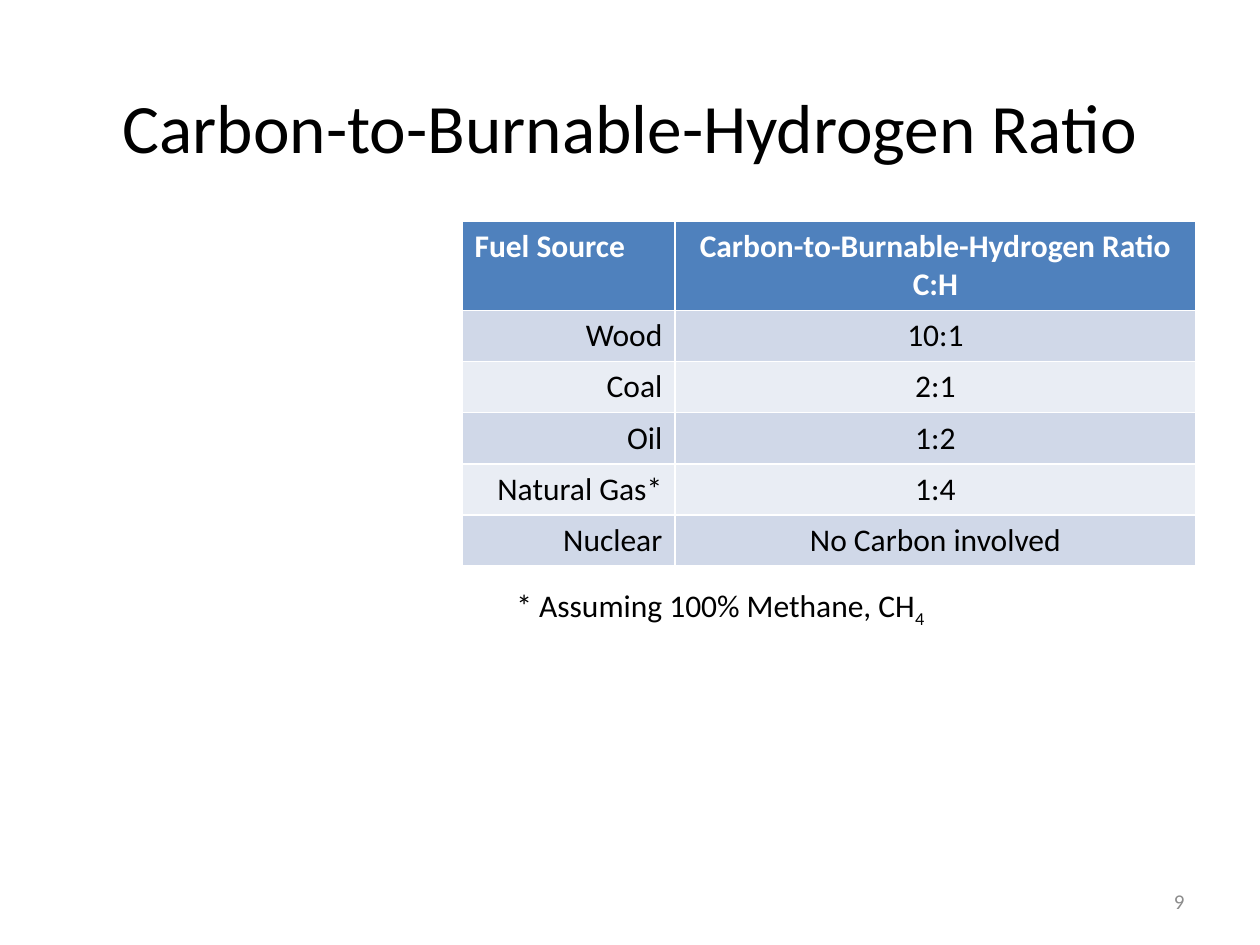
from pptx import Presentation
from pptx.dml.color import RGBColor
from pptx.enum.text import MSO_ANCHOR, MSO_AUTO_SIZE, PP_ALIGN
from pptx.util import Emu, Pt

LEFT, CENTER, RIGHT = PP_ALIGN.LEFT, PP_ALIGN.CENTER, PP_ALIGN.RIGHT
TOP, MIDDLE = MSO_ANCHOR.TOP, MSO_ANCHOR.MIDDLE
FIT_SHAPE = MSO_AUTO_SIZE.SHAPE_TO_FIT_TEXT
NO_FIT = MSO_AUTO_SIZE.NONE

BLACK = RGBColor(0x00, 0x00, 0x00)
WHITE = RGBColor(0xFF, 0xFF, 0xFF)
GRAY = RGBColor(0x8C, 0x8C, 0x8C)
BLUE = RGBColor(0x4F, 0x81, 0xBD)
BAND_DARK = RGBColor(0xD0, 0xD8, 0xE8)
BAND_LIGHT = RGBColor(0xE9, 0xED, 0xF4)


def px(*values):
    return [Emu(round(v * 914400 / 126)) for v in values]


def write(tf, text, size=18, color=BLACK, bold=False, align=LEFT):
    p = tf.paragraphs[0]
    p.alignment = align
    r = p.add_run()
    r.text = text
    r.font.name = "Calibri"
    r.font.size = Pt(size)
    r.font.bold = bold
    r.font.color.rgb = color
    return r


prs = Presentation()
prs.slide_width, prs.slide_height = px(1260, 945)
s = prs.slides.add_slide(prs.slide_layouts[5])

title = s.shapes.title
title.left, title.top, title.width, title.height = px(63, 84, 1134, 158)
tf = title.text_frame
tf.auto_size = NO_FIT
tf.vertical_anchor = TOP
tf.margin_top = 0
write(tf, "Carbon-to-Burnable-Hydrogen Ratio", size=39.6, align=CENTER)

rows = [
    ("Fuel Source", "Carbon-to-Burnable-Hydrogen Ratio C:H"),
    ("Wood", "10:1"),
    ("Coal", "2:1"),
    ("Oil", "1:2"),
    ("Natural Gas*", "1:4"),
    ("Nuclear", "No Carbon involved"),
]
table = s.shapes.add_table(len(rows), 2, *px(462, 221, 734, 306)).table
for col, width in zip(table.columns, px(213, 521)):
    col.width = width
for i, row in enumerate(rows):
    table.rows[i].height = px(51)[0]
    header = i == 0
    fill = BLUE if header else BAND_DARK if i % 2 else BAND_LIGHT
    for j, text in enumerate(row):
        cell = table.cell(i, j)
        cell.fill.solid()
        cell.fill.fore_color.rgb = fill
        align = CENTER if j else LEFT if header else RIGHT
        write(cell.text_frame, text, color=WHITE if header else BLACK,
              bold=header, align=align)

note = s.shapes.add_textbox(*px(504, 580, 440, 51))
tf = note.text_frame
tf.word_wrap = False
tf.auto_size = FIT_SHAPE
write(tf, "* Assuming 100% Methane, CH")
r = write(tf, "4")
r.font._element.set("baseline", "-25000")

number = s.shapes.add_textbox(*px(903, 876, 294, 50))
tf = number.text_frame
tf.word_wrap = True
tf.vertical_anchor = MIDDLE
write(tf, "9", size=12, color=GRAY, align=RIGHT)

prs.save("out.pptx")
